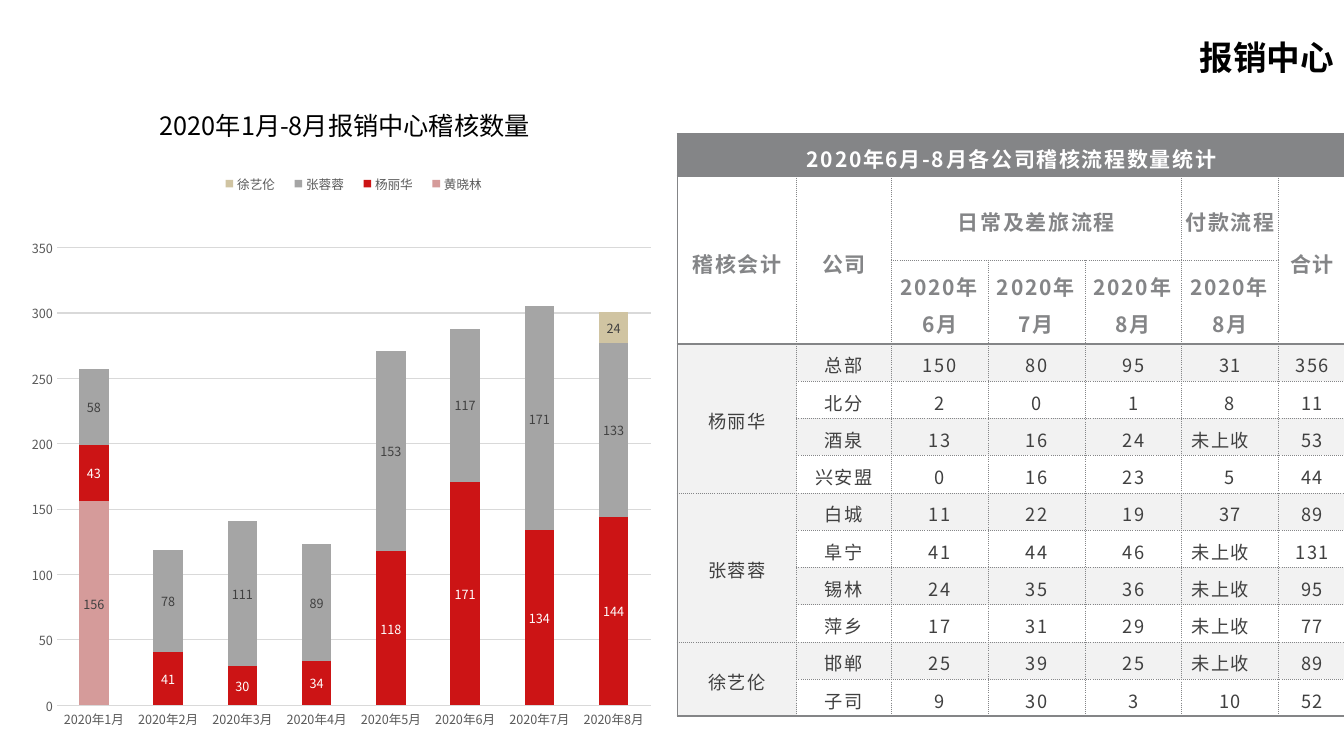
"""Build the reimbursement centre slide with its audit chart and company table."""
from lxml import etree
from pptx import Presentation
from pptx.chart.data import CategoryChartData
from pptx.dml.color import RGBColor
from pptx.enum.chart import XL_CHART_TYPE, XL_LABEL_POSITION, XL_LEGEND_POSITION, XL_TICK_MARK
from pptx.enum.text import MSO_ANCHOR, PP_ALIGN
from pptx.oxml.ns import qn
from pptx.util import Inches, Pt

STACKED = XL_CHART_TYPE.COLUMN_STACKED
LABEL_CENTER = XL_LABEL_POSITION.CENTER
LEGEND_RIGHT = XL_LEGEND_POSITION.RIGHT
NO_TICK = XL_TICK_MARK.NONE
MIDDLE = MSO_ANCHOR.MIDDLE
CENTER, RIGHT = PP_ALIGN.CENTER, PP_ALIGN.RIGHT
FONT = "Noto Sans CJK SC"
BLACK = RGBColor(0x00, 0x00, 0x00)
WHITE = RGBColor(0xFF, 0xFF, 0xFF)
DARK = RGBColor(0x40, 0x40, 0x40)
AXIS_TEXT = RGBColor(0x59, 0x59, 0x59)
GRID_LINE = RGBColor(0xD9, 0xD9, 0xD9)
TABLE_GRAY = RGBColor(0x84, 0x85, 0x87)
BAND = RGBColor(0xF2, 0xF2, 0xF2)
PINK = RGBColor(0xD5, 0x9B, 0x9A)
RED = RGBColor(0xCC, 0x14, 0x15)
BAR_GRAY = RGBColor(0xA5, 0xA5, 0xA5)
SAND = RGBColor(0xD0, 0xC4, 0xA2)


def style_font(font, size, color, bold=False):
    for name, value in {"name": FONT, "size": Pt(size), "bold": bold}.items():
        setattr(font, name, value)
    font.color.rgb = color


def place_in_chart(parent, index, settings):
    layout = parent.find(qn("c:layout"))
    if layout is None:
        layout = etree.Element(qn("c:layout"))
        parent.insert(index, layout)
    manual = etree.SubElement(layout, qn("c:manualLayout"))
    for tag, value in settings.items():
        etree.SubElement(manual, qn(f"c:{tag}")).set("val", str(value))


presentation = Presentation()
presentation.slide_width, presentation.slide_height = Inches(13.33), Inches(7.5)
slide = presentation.slides.add_slide(presentation.slide_layouts[5])

chart_data = CategoryChartData()
chart_data.categories = [f"2020年{month}月" for month in range(1, 9)]
auditors = [
    ("黄晓林", [156] + [None] * 7, PINK, DARK),
    ("杨丽华", [43, 41, 30, 34, 118, 171, 134, 144], RED, WHITE),
    ("张蓉蓉", [58, 78, 111, 89, 153, 117, 171, 133], BAR_GRAY, DARK),
    ("徐艺伦", [None] * 7 + [24], SAND, DARK),
]
for name, counts, _, _ in auditors:
    chart_data.add_series(name, counts)
chart = slide.shapes.add_chart(
    STACKED, Inches(0.1), Inches(0.82), Inches(6.62), Inches(6.68), chart_data).chart
style_font(chart.font, 10, BLACK)
chart.has_title = False
chart.has_legend = True
chart.legend.position = LEGEND_RIGHT
chart.legend.include_in_layout = False
style_font(chart.legend.font, 9, AXIS_TEXT)
plot = chart.plots[0]
plot.gap_width, plot.overlap, plot.vary_by_categories = 150, 100, False
for series, (_, _, fill_color, label_color) in zip(plot.series, auditors):
    series.format.fill.solid()
    series.format.fill.fore_color.rgb = fill_color
    labels = series.data_labels
    labels.show_value = True
    labels.position = LABEL_CENTER
    style_font(labels.font, 9, label_color)
for axis in (chart.category_axis, chart.value_axis):
    axis.major_tick_mark = axis.minor_tick_mark = NO_TICK
    style_font(axis.tick_labels.font, 9, AXIS_TEXT)
value_axis = chart.value_axis
value_axis.minimum_scale, value_axis.maximum_scale, value_axis.major_unit = 0, 350, 50
value_axis.format.line.fill.background()
for line in (chart.category_axis.format.line, value_axis.major_gridlines.format.line):
    line.color.rgb = GRID_LINE
    line.width = Pt(0.75)
edges = {"xMode": "edge", "yMode": "edge"}
place_in_chart(chart.element.find(".//" + qn("c:plotArea")), 0,
               {"layoutTarget": "inner", **edges, "x": 0.07, "y": 0.245, "w": 0.89, "h": 0.68})
place_in_chart(chart.element.find(".//" + qn("c:legend")), 1,
               {**edges, "x": 0.3, "y": 0.13, "w": 0.43, "h": 0.04})

title = slide.shapes.title
caption = slide.shapes.add_textbox(Inches(1.26), Inches(0.9), Inches(4.32), Inches(0.5))
title.left, title.top, title.width, title.height = [
    Inches(value) for value in (11.43, 0.35, 1.9, 0.48)]
title.text_frame.vertical_anchor = MIDDLE
for shape, text, alignment, spacing, size, bold in (
        (title, "报销中心", RIGHT, 0.9, 24, True),
        (caption, "2020年1月-8月报销中心稽核数量", CENTER, 1.5, 18, False)):
    shape.text_frame.word_wrap = True
    paragraph = shape.text_frame.paragraphs[0]
    paragraph.alignment, paragraph.line_spacing = alignment, spacing
    run = paragraph.add_run()
    run.text = text
    style_font(run.font, size, BLACK, bold)

PENDING = "未上收　"
rows = [
    ["2020年6月-8月各公司稽核流程数量统计"] + [""] * 6,
    ["稽核会计", "公司", "日常及差旅流程", "", "", "付款流程", "合计"],
    ["", "", "2020年6月", "2020年7月", "2020年8月", "2020年8月", ""],
    ["杨丽华", "总部", 150, 80, 95, 31, 356],
    ["", "北分", 2, 0, 1, 8, 11],
    ["", "酒泉", 13, 16, 24, PENDING, 53],
    ["", "兴安盟", 0, 16, 23, 5, 44],
    ["张蓉蓉", "白城", 11, 22, 19, 37, 89],
    ["", "阜宁", 41, 44, 46, PENDING, 131],
    ["", "锡林", 24, 35, 36, PENDING, 95],
    ["", "萍乡", 17, 31, 29, PENDING, 77],
    ["徐艺伦", "邯郸", 25, 39, 25, PENDING, 89],
    ["", "子司", 9, 30, 3, 10, 52],
]
column_widths = [1.18, 0.94] + [0.96] * 4 + [0.67]
row_heights = [0.42, 0.83, 0.83] + [0.37] * 10
table = slide.shapes.add_table(
    len(rows), len(column_widths), Inches(6.72), Inches(1.33),
    Inches(sum(column_widths)), Inches(sum(row_heights))).table
table.first_row = table.horz_banding = False
style_id = table._tbl.tblPr.find(qn("a:tableStyleId"))
style_id.text = "{2D5ABB26-0587-4C30-8999-92F81FD0307C}"
for column, width in zip(table.columns, column_widths):
    column.width = Inches(width)
for table_row, height in zip(table.rows, row_heights):
    table_row.height = Inches(height)
for top, left, bottom, right in (
        (0, 0, 0, 6), (1, 0, 2, 0), (1, 1, 2, 1), (1, 2, 1, 4), (1, 6, 2, 6),
        (3, 0, 6, 0), (7, 0, 10, 0), (11, 0, 12, 0)):
    table.cell(top, left).merge(table.cell(bottom, right))

HEAVY_ROWS, HEAVY_COLUMNS = (0, 1, 3, 13), (0, 7)
for row, values in enumerate(rows):
    for column, value in enumerate(values):
        cell = table.cell(row, column)
        if cell.is_spanned:
            continue
        properties = cell._tc.get_or_add_tcPr()
        heavy_sides = {
            "lnL": column in HEAVY_COLUMNS,
            "lnR": column + cell.span_width in HEAVY_COLUMNS,
            "lnT": row in HEAVY_ROWS,
            "lnB": row + cell.span_height in HEAVY_ROWS,
        }
        for side, heavy in heavy_sides.items():
            border = etree.SubElement(properties, qn(f"a:{side}"), w=str(Pt(1.5 if heavy else 0.25)))
            border_fill = etree.SubElement(border, qn("a:solidFill"))
            etree.SubElement(border_fill, qn("a:srgbClr"), val=str(TABLE_GRAY))
            etree.SubElement(border, qn("a:prstDash"), val="solid" if heavy else "dot")
        if row == 0:
            fill_color, size, color = TABLE_GRAY, 15, WHITE
        elif row < 3:
            fill_color, size, color = WHITE, 15, TABLE_GRAY
        else:
            banded = column == 0 or row % 2 == 1
            fill_color, size, color = BAND if banded else WHITE, 13, DARK
        cell.fill.solid()
        cell.fill.fore_color.rgb = fill_color
        cell.vertical_anchor = MIDDLE
        cell.margin_left = cell.margin_right = Inches(0.03)
        cell.margin_top = cell.margin_bottom = Inches(0.01)
        paragraph = cell.text_frame.paragraphs[0]
        paragraph.alignment, paragraph.line_spacing = CENTER, 1.2
        run = paragraph.add_run()
        run.text = str(value)
        style_font(run.font, size, color, row < 3)
        run.font._element.set("spc", "120")

for root in (slide.element, chart.element):
    for latin in list(root.iter(qn("a:latin"))):
        latin.addnext(etree.Element(qn("a:ea"), typeface=FONT))

presentation.save("out.pptx")
